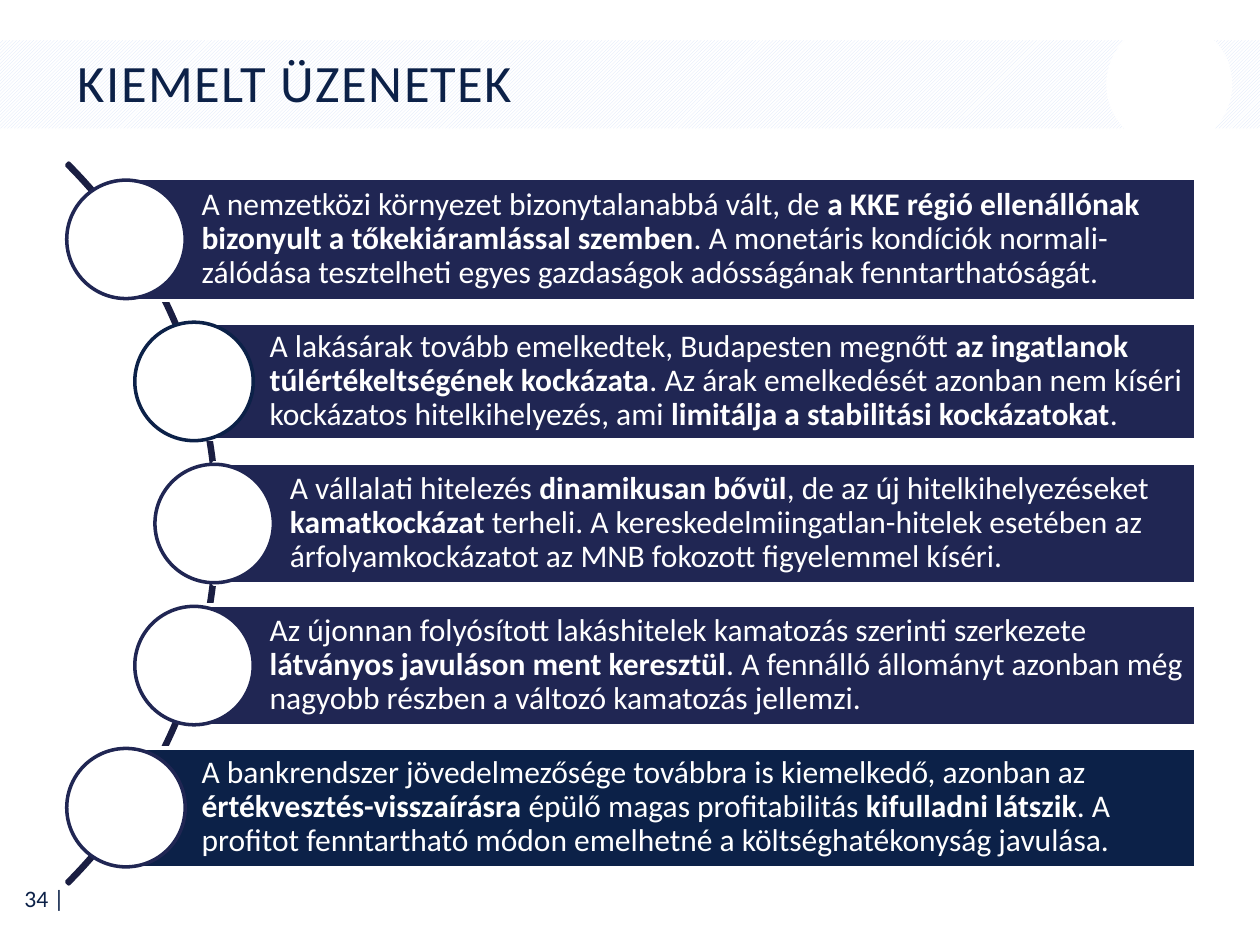
import pptx
import pptx.util
import pptx.dml.color
import pptx.enum.dml
import pptx.enum.shapes
import pptx.enum.text
from dataclasses import dataclass

Inches = pptx.util.Inches
Pt = pptx.util.Pt
RGB = pptx.dml.color.RGBColor
Kind = pptx.enum.shapes.MSO_SHAPE
Align = pptx.enum.text.PP_ALIGN
Anchor = pptx.enum.text.MSO_ANCHOR


@dataclass(frozen=True)
class Theme:
    font: str = "Calibri"
    navy: RGB = RGB(0x0C, 0x21, 0x48)
    indigo: RGB = RGB(0x20, 0x26, 0x53)
    arc: RGB = RGB(0x1A, 0x1E, 0x42)
    pale: RGB = RGB(0xDA, 0xE5, 0xF9)
    white: RGB = RGB(0xFF, 0xFF, 0xFF)
    title: float = 30
    body: float = 18
    foot: float = 13.5
    line: float = 2


@dataclass(frozen=True)
class Box:
    left: float
    top: float
    width: float
    height: float

    def emu(self) -> list:
        return [Inches(v) for v in (self.left, self.top, self.width, self.height)]


@dataclass(frozen=True)
class Item:
    hub: float      # x of the circle centre, where the bar starts
    height: float
    fill: RGB
    ring: RGB
    text: str       # bold parts stand between asterisks


T = Theme()
RIGHT, DISC = 9.49, 0.94
FIRST, STEP = 1.9, 1.1275

ITEMS = [
    Item(1, 0.97, T.indigo, T.indigo,
         "A nemzetközi környezet bizonytalanabbá vált, de *a KKE régió ellenállónak "
         "bizonyult a tőkekiáramlással szemben*. A monetáris kondíciók normali-zálódása "
         "tesztelheti egyes gazdaságok adósságának fenntarthatóságát."),
    Item(1.54, 0.92, T.indigo, T.navy,
         "A lakásárak tovább emelkedtek, Budapesten megnőtt *az ingatlanok "
         "túlértékeltségének kockázata*. Az árak emelkedését azonban nem kíséri "
         "kockázatos hitelkihelyezés, ami *limitálja a stabilitási kockázatokat*."),
    Item(1.7, 0.96, T.indigo, T.indigo,
         "A vállalati hitelezés *dinamikusan bővül*, de az új hitelkihelyezéseket "
         "*kamatkockázat* terheli. A kereskedelmiingatlan-hitelek esetében az "
         "árfolyamkockázatot az MNB fokozott figyelemmel kíséri."),
    Item(1.54, 0.96, T.indigo, T.indigo,
         "Az újonnan folyósított lakáshitelek kamatozás szerinti szerkezete "
         "*látványos javuláson ment keresztül*. A fennálló állományt azonban még "
         "nagyobb részben a változó kamatozás jellemzi."),
    Item(1, 0.95, T.navy, T.indigo,
         "A bankrendszer jövedelmezősége továbbra is kiemelkedő, azonban az "
         "*értékvesztés-visszaírásra *épülő magas profitabilitás *kifulladni látszik*. "
         "A profitot fenntartható módon emelhetné a költséghatékonyság javulása."),
]


def draw(slide, kind, box: Box, fill=None, line=None):
    shape = slide.shapes.add_shape(kind, *box.emu())
    shape.shadow.inherit = False
    if fill is None:
        shape.fill.background()
    else:
        shape.fill.solid()
        shape.fill.fore_color.rgb = fill
    if line is None:
        shape.line.fill.background()
    else:
        shape.line.color.rgb = line
        shape.line.width = Pt(T.line)
    return shape


def write(shape, text: str, size: float, color: RGB, align=Align.LEFT, space=0.9):
    frame = shape.text_frame
    frame.word_wrap = True
    frame.vertical_anchor = Anchor.MIDDLE
    para = frame.paragraphs[0]
    para.alignment = align
    para.line_spacing = space
    for i, part in enumerate(text.split("*")):
        if part:
            run = para.add_run()
            run.text = part
            run.font.name = T.font
            run.font.size = Pt(size)
            run.font.color.rgb = color
            run.font.bold = i % 2 == 1
    return para


def row(slide, item: Item, mid: float) -> None:
    bar = draw(slide, Kind.RECTANGLE,
               Box(item.hub, mid - item.height / 2, RIGHT - item.hub, item.height),
               item.fill, T.white)
    frame = bar.text_frame
    frame.margin_left = Inches(0.6)
    frame.margin_top = frame.margin_right = frame.margin_bottom = Inches(0.05)
    write(bar, item.text, T.body, T.white)
    draw(slide, Kind.OVAL, Box(item.hub - DISC / 2, mid - DISC / 2, DISC, DISC),
         T.white, item.ring)


def main() -> None:
    deck = pptx.Presentation()
    deck.slide_width, deck.slide_height = Inches(10), Inches(7.5)
    slide = deck.slides.add_slide(deck.slide_layouts[6])

    # Hatched title band with its round gap
    band = draw(slide, Kind.RECTANGLE, Box(0, 0.32, 10, 0.7))
    band.fill.patterned()
    band.fill.pattern = pptx.enum.dml.MSO_PATTERN.LIGHT_UPWARD_DIAGONAL
    band.fill.fore_color.rgb = T.pale
    band.fill.back_color.rgb = T.white
    draw(slide, Kind.OVAL, Box(8.78, 0.17, 1, 1), T.white)

    # Title and page number
    head = slide.shapes.add_textbox(*Box(0.52, 0.34, 8.32, 0.67).emu())
    para = write(head, "KIEMELT ÜZENETEK", T.title, T.navy)
    para.runs[0].font._element.set("spc", "80")
    foot = slide.shapes.add_textbox(*Box(0.01, 6.94, 0.6, 0.37).emu())
    write(foot, "34 |", T.foot, T.navy, Align.RIGHT, 1.0)

    # Arc behind the rows
    arc = draw(slide, Kind.BLOCK_ARC, Box(-6.36, 0.11, 8.09, 8.09), line=T.arc)
    for i, value in enumerate((189, 27, 0.003)):
        arc.adjustments[i] = value

    # Message rows
    for i, item in enumerate(ITEMS):
        row(slide, item, FIRST + i * STEP)

    deck.save("out.pptx")


if __name__ == "__main__":
    main()
